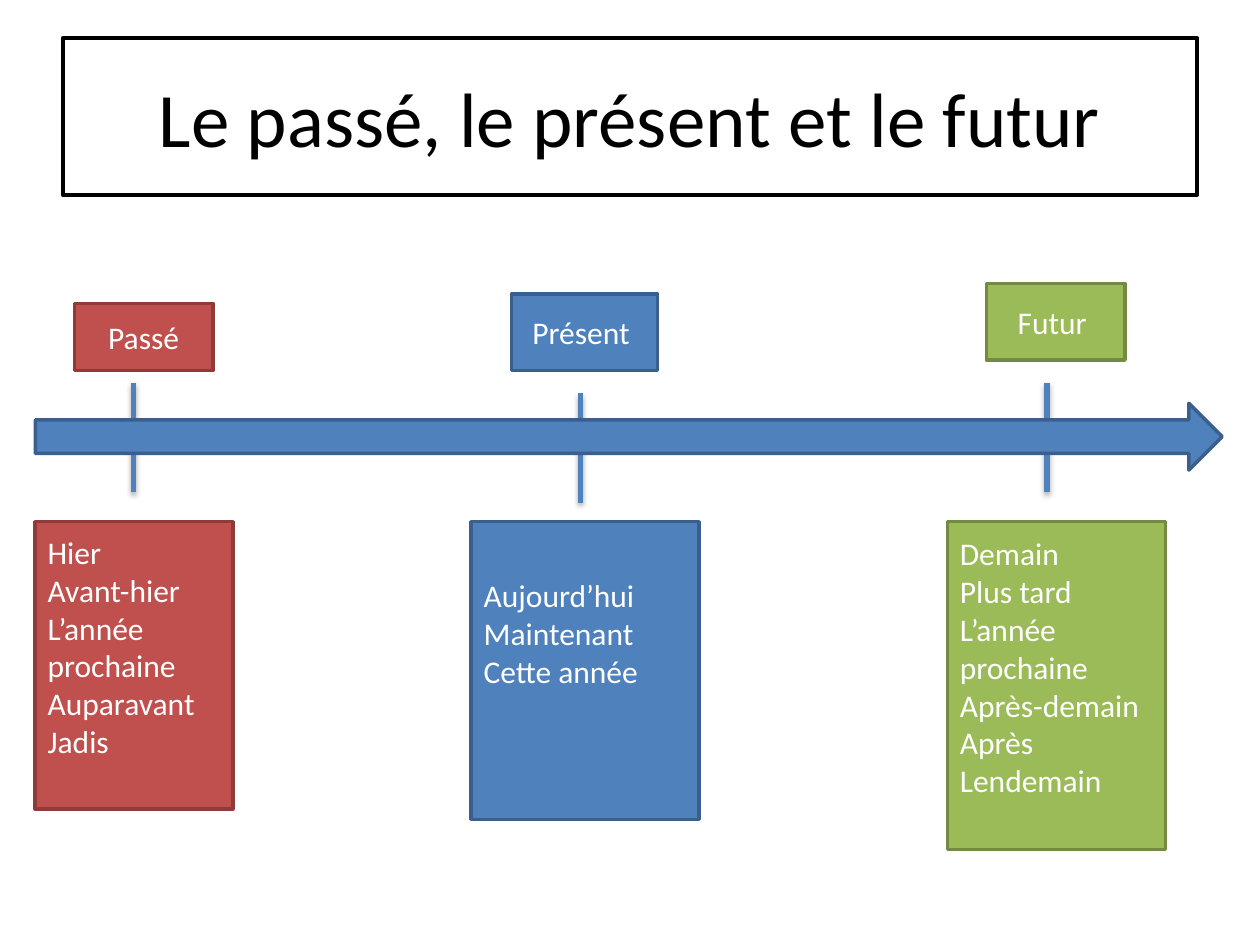
from pptx import Presentation
from pptx.dml.color import RGBColor as Rgb
from pptx.enum.shapes import MSO_CONNECTOR as Link, MSO_SHAPE as Kind
from pptx.enum.text import MSO_ANCHOR as Anchor, PP_ALIGN as Align
from pptx.oxml import parse_xml
from pptx.util import Inches, Pt

HUES = {
    "white": "FFFFFF", "black": "000000",
    "red": "C0504D", "wine": "8E3B39",
    "blue": "4F81BD", "navy": "3A5F8C",
    "green": "9BBB59", "moss": "738A42",
}
SHADE = (
    '<a:effectLst xmlns:a="http://schemas.openxmlformats.org/drawingml/2006/main">'
    '<a:outerShdw blurRad="40000" dist="23000" dir="5400000" rotWithShape="0">'
    '<a:srgbClr val="000000"><a:alpha val="35000"/></a:srgbClr>'
    '</a:outerShdw></a:effectLst>'
)

deck = Presentation()
deck.slide_width, deck.slide_height = Inches(10), Inches(7.5)
slide = deck.slides.add_slide(deck.slide_layouts[6])
shapes = slide.shapes

# Grid of 100 columns by 100 rows
COL, ROW = deck.slide_width / 100, deck.slide_height / 100


def hue(name):
    return Rgb.from_string(HUES[name])


def block(kind, area, fill, edge, lines=(), size=18, ink="white",
          align=Align.CENTER, lift=0):
    """Draw a filled shape; lift raises its centred text by extra bottom margin."""
    x, y, w, h = area
    shape = shapes.add_shape(kind, int(x * COL), int(y * ROW), int(w * COL), int(h * ROW))
    shape.shadow.inherit = False
    shape.fill.solid()
    shape.fill.fore_color.rgb = hue(fill)
    shape.line.color.rgb = hue(edge)
    shape.line.width = Pt(2)
    frame = shape.text_frame
    form = {"word_wrap": True, "vertical_anchor": Anchor.MIDDLE,
            "margin_bottom": Inches(0.05 + lift)}
    for key, value in form.items():
        setattr(frame, key, value)
    for i, line in enumerate(lines):
        para = frame.add_paragraph() if i else frame.paragraphs[0]
        para.alignment = align
        run = para.add_run()
        run.text = line
        for key, value in {"name": "Calibri", "size": Pt(size)}.items():
            setattr(run.font, key, value)
        run.font.color.rgb = hue(ink)


# Title
block(Kind.RECTANGLE, (5, 4, 90, 16.67), "white", "black",
      ["Le passé, le présent et le futur"], size=44, ink="black")

# Tick marks: column and top row
for x, top in ((10.6, 40.5), (46.1, 41.6), (83.1, 40.5)):
    tick = shapes.add_connector(Link.STRAIGHT, int(x * COL), int(top * ROW),
                                int(x * COL), int((top + 11.6) * ROW))
    tick.line.color.rgb = hue("blue")
    tick.line.width = Pt(3)
    tick._element.spPr.append(parse_xml(SHADE))

# Time arrow
block(Kind.RIGHT_ARROW, (2.8, 42.67, 94.2, 7.07), "blue", "navy")

# Each tense: colours, label and its area, word list and its area, text lift
tenses = [
    ("red", "wine", "Passé", (5.9, 32.1, 11, 7.1),
     ["Hier", "Avant-hier", "L’année prochaine", "Auparavant", "Jadis"],
     (2.8, 55.2, 15.7, 30.4), 0.3),
    ("blue", "navy", "Présent ", (40.6, 31.1, 11.6, 8.1),
     ["Aujourd’hui", "Maintenant", "Cette année"],
     (37.4, 55.2, 18.1, 31.5), 0.6),
    ("green", "moss", "Futur ", (78.3, 30, 11, 8.1),
     ["Demain", "Plus tard", "L’année prochaine", "Après-demain", "Après", "Lendemain"],
     (75.2, 55.2, 17.3, 34.7), 0.3),
]
for fill, edge, label, tag, words, area, lift in tenses:
    block(Kind.RECTANGLE, tag, fill, edge, [label])
    block(Kind.RECTANGLE, area, fill, edge, words, align=Align.LEFT, lift=lift)

deck.save("out.pptx")
